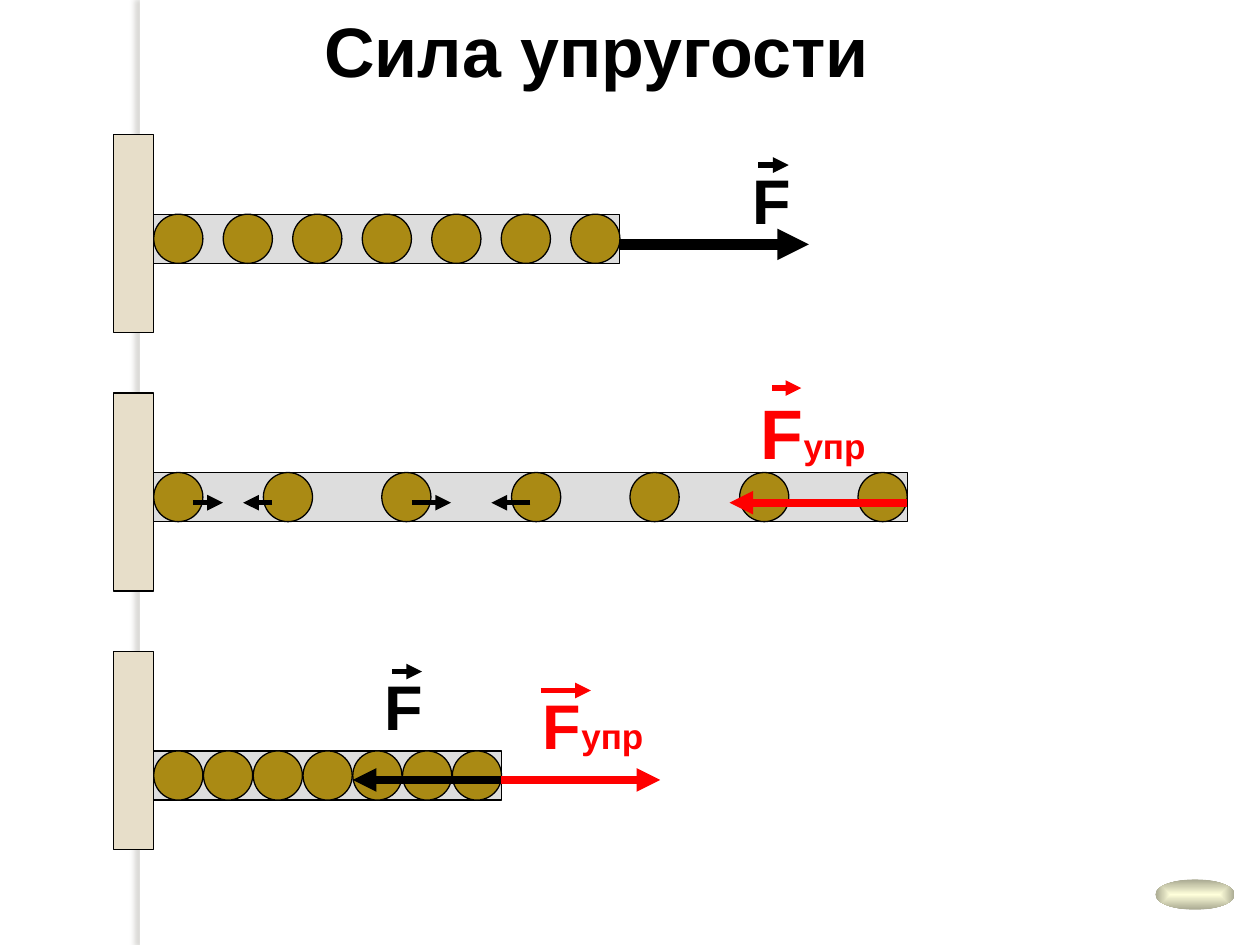
import dataclasses

import pptx
import pptx.dml.color
import pptx.enum.shapes
import pptx.enum.text
import pptx.oxml
import pptx.oxml.ns
import pptx.util

Inches = pptx.util.Inches
Pt = pptx.util.Pt
SHAPE = pptx.enum.shapes.MSO_SHAPE
NAMESPACE = pptx.oxml.ns.nsdecls("a")


@dataclasses.dataclass(frozen=True)
class Theme:
    font: str = "Arial"
    black: str = "000000"
    red: str = "FF0000"
    white: str = "FFFFFF"
    wall: str = "E7DEC9"
    rod: str = "DDDDDD"
    atom: str = "AA8A14"
    strip_shadow: str = "736F63"
    button_center: str = "FFFFDB"
    button_edge: str = "A9A991"
    title_size: int = 40
    force_size: int = 36
    subscript_size: int = 20
    outline: float = 0.75


def rgb(color):
    return pptx.dml.color.RGBColor.from_string(color)


def add_text(para, text, *, font, size, color, bold=True):
    span = para.add_run()
    span.text = text
    span.font.name = font
    span.font.size = Pt(size)
    span.font.bold = bold
    span.font.color.rgb = rgb(color)


def add_xml(parent, xml):
    parent.append(pptx.oxml.parse_xml(xml))


class SlideBuilder:
    ATOM = 0.39
    WALL_LEFT, WALL_WIDTH, WALL_HEIGHT = 0.9, 0.32, 1.57
    ROD_LEFT = WALL_LEFT + WALL_WIDTH

    def __init__(self, slide, theme):
        self.slide = slide
        self.theme = theme

    def shape(self, kind, left, top, width, height, fill=None, outlined=True):
        shape = self.slide.shapes.add_shape(
            kind, Inches(left), Inches(top), Inches(width), Inches(height))
        shape.shadow.inherit = False
        if fill:
            shape.fill.solid()
            shape.fill.fore_color.rgb = rgb(fill)
        if outlined:
            shape.line.color.rgb = rgb(self.theme.black)
            shape.line.width = Pt(self.theme.outline)
        else:
            shape.line.fill.background()
        return shape

    def title(self, text, left, top, width, height):
        box = self.slide.shapes.title
        box.left, box.top = Inches(left), Inches(top)
        box.width, box.height = Inches(width), Inches(height)
        box.text_frame.word_wrap = False
        para = box.text_frame.paragraphs[0]
        para.alignment = pptx.enum.text.PP_ALIGN.CENTER
        add_text(para, text, font=self.theme.font,
                 size=self.theme.title_size, color=self.theme.black)

    def side_strip(self):
        strip = self.shape(SHAPE.RECTANGLE, 1.11, 0, 0.08, 7.5,
                           self.theme.white, outlined=False)
        properties = strip.element.spPr
        properties.remove(properties.find(pptx.oxml.ns.qn("a:effectLst")))
        add_xml(properties, f'''<a:effectLst {NAMESPACE}>
            <a:outerShdw blurRad="{Pt(3)}" dist="{Pt(3)}" dir="10800000">
            <a:srgbClr val="{self.theme.strip_shadow}"><a:alpha val="25000"/></a:srgbClr>
            </a:outerShdw></a:effectLst>''')

    def button(self, left, top, width, height):
        """Add an oval whose gradient darkens from its centre outwards."""
        oval = self.shape(SHAPE.OVAL, left, top, width, height, outlined=False)
        gradient = pptx.oxml.parse_xml(f'''<a:gradFill {NAMESPACE} rotWithShape="1"><a:gsLst>
            <a:gs pos="0"><a:srgbClr val="{self.theme.button_center}"/></a:gs>
            <a:gs pos="100000"><a:srgbClr val="{self.theme.button_edge}"/></a:gs>
            </a:gsLst><a:path path="shape">
            <a:fillToRect l="50000" t="50000" r="50000" b="50000"/>
            </a:path></a:gradFill>''')
        oval.element.spPr.find(pptx.oxml.ns.qn("a:prstGeom")).addnext(gradient)

    def rod(self, wall_top, top, width, atom_lefts=None, count=7):
        """Add a wall and its rod; atoms are evenly spread unless placed."""
        self.shape(SHAPE.RECTANGLE, self.WALL_LEFT, wall_top,
                   self.WALL_WIDTH, self.WALL_HEIGHT, self.theme.wall)
        self.shape(SHAPE.RECTANGLE, self.ROD_LEFT, top, width, self.ATOM, self.theme.rod)
        step = (width - self.ATOM) / (count - 1)
        for left in atom_lefts or [self.ROD_LEFT + i * step for i in range(count)]:
            self.shape(SHAPE.OVAL, left, top, self.ATOM, self.ATOM, self.theme.atom)

    def arrow(self, start, end, y, color, width=3):
        line = self.slide.shapes.add_connector(
            pptx.enum.shapes.MSO_CONNECTOR.STRAIGHT,
            Inches(start), Inches(y), Inches(end), Inches(y))
        line.line.color.rgb = rgb(color)
        line.line.width = Pt(width)
        add_xml(line.line._get_or_add_ln(), f'<a:tailEnd {NAMESPACE} type="triangle"/>')
        add_xml(line.element.spPr, f"<a:effectLst {NAMESPACE}/>")

    def force(self, left, top, width, height, color, vector, subscript="", size=None):
        """Add a force label; vector is (start, end, y) of the arrow above it."""
        box = self.slide.shapes.add_textbox(
            Inches(left), Inches(top), Inches(width), Inches(height))
        box.text_frame.word_wrap = False
        para = box.text_frame.paragraphs[0]
        add_text(para, "F", font=self.theme.font,
                 size=size or self.theme.force_size, color=color)
        if subscript:
            add_text(para, subscript, font=self.theme.font,
                     size=self.theme.subscript_size, color=color)
        self.arrow(*vector, color)


def main():
    theme = Theme()
    deck = pptx.Presentation()
    deck.slide_width, deck.slide_height = Inches(10), Inches(7.5)
    page = SlideBuilder(deck.slides.add_slide(deck.slide_layouts[5]), theme)

    page.side_strip()
    page.title("Сила упругости", 2.46, 0.01, 4.55, 0.77)

    # Rod at rest, pulled by an outside force
    page.rod(1.07, 1.7, 3.7)
    page.arrow(4.92, 6.42, 1.94, theme.black, width=6)
    page.force(5.87, 1.23, 0.51, 0.7, theme.black, (6.02, 6.26, 1.31))

    # Stretched rod
    page.rod(3.12, 3.75, 5.98, [1.22, 2.09, 3.03, 4.06, 5, 5.87, 6.81])
    for start, end in [(1.53, 1.77), (2.16, 1.93), (3.27, 3.58), (4.21, 3.9)]:
        page.arrow(start, end, 3.99, theme.black)
    page.arrow(7.2, 5.79, 3.99, theme.red, width=4.5)
    page.force(5.94, 3.04, 1.03, 0.77, theme.red, (6.13, 6.36, 3.08),
               subscript="упр", size=40)

    # Compressed rod
    page.rod(5.17, 5.96, 2.76)
    page.arrow(3.98, 2.8, 6.19, theme.black, width=4.5)
    page.arrow(3.98, 5.24, 6.19, theme.red, width=4.5)
    page.force(4.21, 5.4, 1, 0.7, theme.red, (4.29, 4.69, 5.48), subscript="упр")
    page.force(2.95, 5.25, 0.51, 0.7, theme.black, (3.11, 3.35, 5.33))

    page.button(9.17, 6.98, 0.63, 0.24)
    deck.save("out.pptx")


if __name__ == "__main__":
    main()
